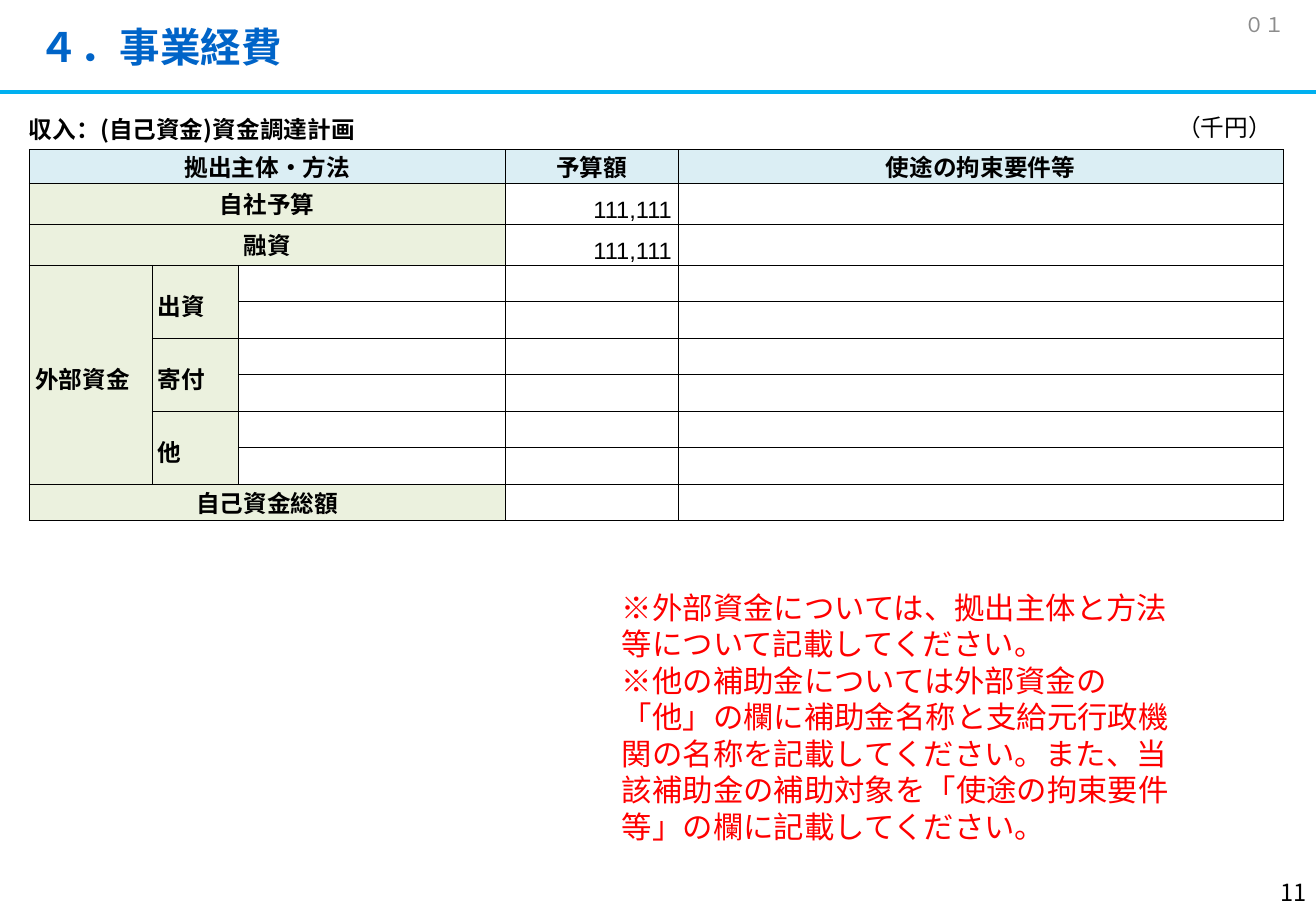
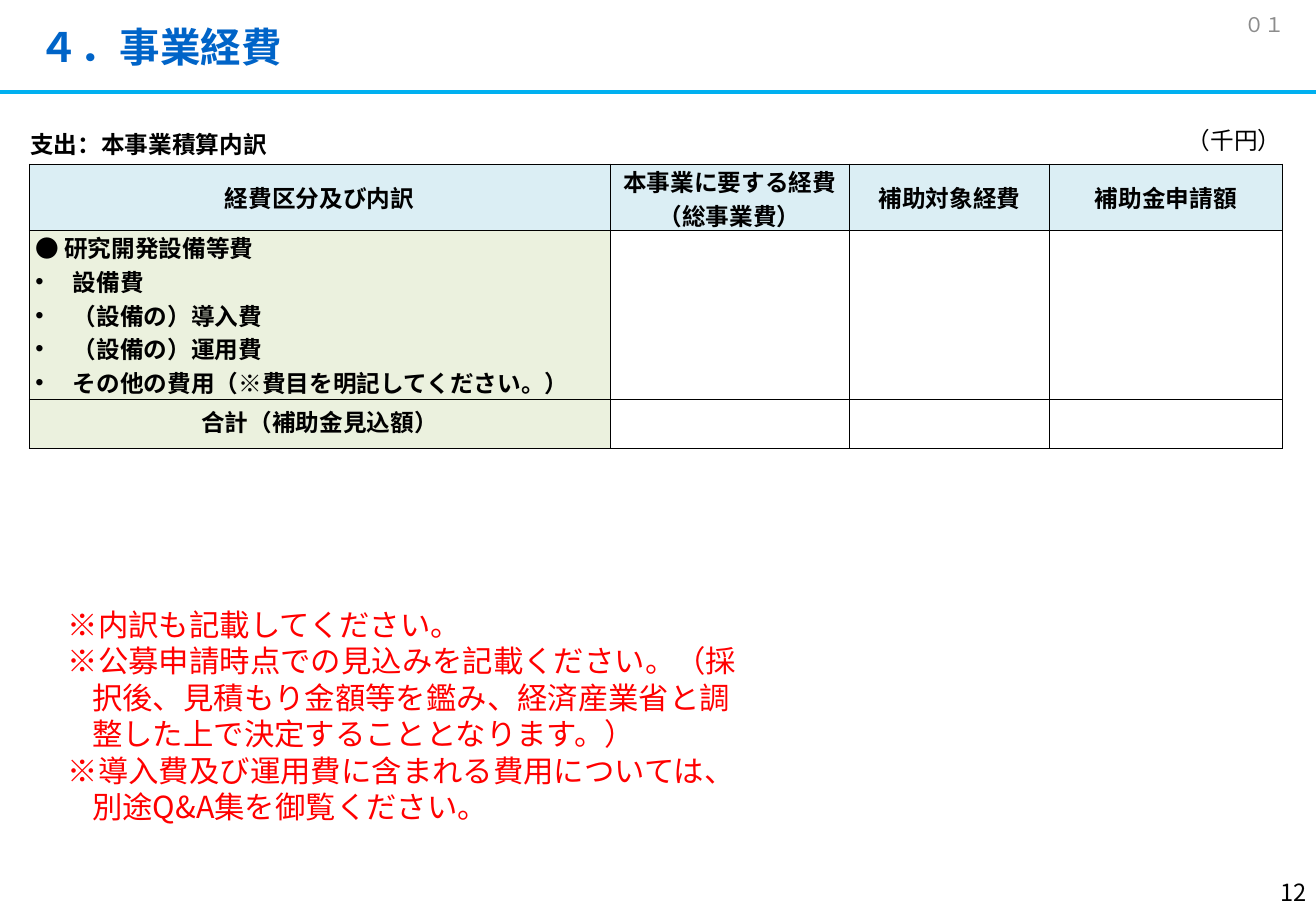
from pptx import Presentation
from pptx.dml.color import RGBColor
from pptx.enum.shapes import MSO_CONNECTOR as CONN
from pptx.enum.text import MSO_ANCHOR as ANCHOR, PP_ALIGN as ALIGN
from pptx.oxml.ns import qn
from pptx.util import Inches, Pt
from lxml.etree import SubElement

COLORS = {"title": "0064C8", "rule": "00B0F0", "head": "DBEEF4", "label": "EBF1DE",
          "blank": "FFFFFF", "text": "000000", "code": "8C8C8C", "note": "FF0000"}
FONT, CELL_FONT = "Noto Sans CJK JP", "Arial"
TITLE, CODE = "４．事業経費", "０１"
TABLE_LEFT = 0.24

# Paragraph formats for the table cells
HEAD = {"alignment": ALIGN.CENTER}
CENTER = {"alignment": ALIGN.CENTER, "line_spacing": Pt(20)}
AMOUNT = {"alignment": ALIGN.RIGHT, "line_spacing": Pt(24)}
GROUP = {"alignment": ALIGN.JUSTIFY, "line_spacing": Pt(24)}
ITEM = {"alignment": ALIGN.JUSTIFY, "line_spacing": Pt(20)}
TOTAL = {"alignment": ALIGN.CENTER, "line_spacing": Pt(17), "space_before": Pt(6)}
EMPTY = {"line_spacing": Pt(20)}

# Cells: (row, column, rows spanned, columns spanned, fill, format, paragraphs)
INCOME = {
    "top": 1.23,
    "cols": [1.01, 0.71, 2.2, 1.42, 4.98],
    "rows": [0.28, 0.33, 0.34] + [0.28, 0.29] * 3 + [0.28],
    "cells": [
        (0, 0, 1, 3, "head", CENTER, ["拠出主体・方法"]),
        (0, 3, 1, 1, "head", CENTER, ["予算額"]),
        (0, 4, 1, 1, "head", CENTER, ["使途の拘束要件等"]),
        (1, 0, 1, 3, "label", CENTER, ["自社予算"]),
        (1, 3, 1, 1, "blank", AMOUNT, ["111,111"]),
        (2, 0, 1, 3, "label", CENTER, ["融資"]),
        (2, 3, 1, 1, "blank", AMOUNT, ["111,111"]),
        (3, 0, 6, 1, "label", GROUP, ["外部資金"]),
        (3, 1, 2, 1, "label", GROUP, ["出資"]),
        (5, 1, 2, 1, "label", GROUP, ["寄付"]),
        (7, 1, 2, 1, "label", GROUP, ["他"]),
        (9, 0, 1, 3, "label", CENTER, ["自己資金総額"]),
    ],
}
EXPENSES = {
    "top": 1.35,
    "cols": [4.78, 1.97, 1.65, 1.91],
    "rows": [0.55, 1.39, 0.4],
    "cells": [
        (0, 0, 1, 1, "head", HEAD, ["経費区分及び内訳"]),
        (0, 1, 1, 1, "head", HEAD, ["本事業に要する経費", "（総事業費）"]),
        (0, 2, 1, 1, "head", HEAD, ["補助対象経費"]),
        (0, 3, 1, 1, "head", HEAD, ["補助金申請額"]),
        (1, 0, 1, 1, "label", ITEM, ["● 研究開発設備等費", "設備費", "（設備の）導入費",
                                     "（設備の）運用費",
                                     "その他の費用（※費目を明記してください。）"]),
        (2, 0, 1, 1, "label", TOTAL, ["合計（補助金見込額）"]),
    ],
}

# Boxes are left, top, width, height; notes pair a hanging indent with a text
SLIDES = [
    {"number": "11", "table": INCOME,
     "caption": ("収入：(自己資金)資金調達計画", (0.14, 0.9, 3.72, 0.34)),
     "unit": (9.59, 0.88, 1.13, 0.34),
     "note_box": (5.02, 4.8, 4.8, 2.22),
     "notes": [
         (0, "※外部資金については、拠出主体と方法等について記載してください。"),
         (0, "※他の補助金については外部資金の「他」の欄に補助金名称と支給元行政機関の名称を"
             "記載してください。また、当該補助金の補助対象を「使途の拘束要件等」の欄に"
             "記載してください。")]},
    {"number": "12", "table": EXPENSES,
     "caption": ("支出：本事業積算内訳", (0.15, 1.02, 3.72, 0.34)),
     "unit": (9.67, 0.99, 1.13, 0.34),
     "note_box": (0.46, 4.94, 5.75, 1.92),
     "notes": [
         (0, "※内訳も記載してください。"),
         (0.2, "※公募申請時点での見込みを記載ください。（採択後、見積もり金額等を鑑み、"
               "経済産業省と調整した上で決定することとなります。）"),
         (0.2, "※導入費及び運用費に含まれる費用については、別途Q&A集を御覧ください。")]},
]


def rgb(name):
    return RGBColor.from_string(COLORS[name])


def set_attrs(obj, values):
    for name, value in values.items():
        setattr(obj, name, value)


def add_run(p, text, size, color="text", bold=False, font=FONT):
    r = p.add_run()
    r.text = text
    r.font.color.rgb = rgb(color)
    set_attrs(r.font, {"size": Pt(size), "bold": bold, "name": font})
    SubElement(r.font._element, qn("a:ea"), typeface=FONT)


def hang(p, indent, bullet=None):
    pPr = p._p.get_or_add_pPr()
    pPr.set("marL", str(Inches(indent)))
    pPr.set("indent", str(-Inches(indent)))
    if bullet:
        SubElement(pPr, qn("a:buFont"), typeface="Arial")
        SubElement(pPr, qn("a:buChar"), char=bullet)


def paragraphs(tf, count):
    return [tf.paragraphs[0]] + [tf.add_paragraph() for _ in range(count - 1)]


def add_text(s, box, texts, size, color="text", bold=False,
             anchor=ANCHOR.TOP, align=ALIGN.LEFT):
    tf = s.shapes.add_textbox(*map(Inches, box)).text_frame
    set_attrs(tf, {"word_wrap": True, "vertical_anchor": anchor})
    for p, (indent, text) in zip(paragraphs(tf, len(texts)), texts):
        p.alignment = align
        if indent:
            hang(p, indent)
        add_run(p, text, size, color, bold)


def style_cell(cell, fill):
    tcPr = cell._tc.get_or_add_tcPr()
    for side in ("a:lnL", "a:lnR", "a:lnT", "a:lnB"):
        ln = SubElement(tcPr, qn(side), w=str(Pt(0.5)))
        SubElement(SubElement(ln, qn("a:solidFill")), qn("a:srgbClr"), val=COLORS["text"])
    cell.fill.solid()
    cell.fill.fore_color.rgb = rgb(fill)
    set_attrs(cell, {"margin_left": Inches(0.05), "margin_right": Inches(0.05),
                     "margin_top": 0, "margin_bottom": 0,
                     "vertical_anchor": ANCHOR.MIDDLE})


def add_budget_table(s, data):
    cols, rows = data["cols"], data["rows"]
    table = s.shapes.add_table(len(rows), len(cols), Inches(TABLE_LEFT), Inches(data["top"]),
                               Inches(sum(cols)), Inches(sum(rows))).table
    for col, width in zip(table.columns, cols):
        col.width = Inches(width)
    for row, height in zip(table.rows, rows):
        row.height = Inches(height)

    # Fill colours, spans and formats by position
    fills = {(r + i, c + j): fill for r, c, h, w, fill, _, _ in data["cells"]
             for i in range(h) for j in range(w)}
    for r in range(len(rows)):
        for c in range(len(cols)):
            cell = table.cell(r, c)
            style_cell(cell, fills.get((r, c), "blank"))
            set_attrs(cell.text_frame.paragraphs[0], EMPTY)
    for r, c, h, w, _, fmt, texts in data["cells"]:
        cell = table.cell(r, c)
        if h * w > 1:
            cell.merge(table.cell(r + h - 1, c + w - 1))
        if fmt is ITEM:
            cell.vertical_anchor = ANCHOR.TOP
        for i, (p, text) in enumerate(zip(paragraphs(cell.text_frame, len(texts)), texts)):
            set_attrs(p, {"line_spacing": None, **fmt})
            if fmt is ITEM and i:
                hang(p, 0.31, "•")
            add_run(p, text, 14, bold=fmt is not AMOUNT, font=CELL_FONT)


def add_frame(s, number):
    # Title, rule, document code and page number
    add_text(s, (0.22, 0.13, 10.4, 0.5), [(0, TITLE)], 24, "title", True, ANCHOR.MIDDLE)
    rule = s.shapes.add_connector(CONN.STRAIGHT, Inches(-0.01), Inches(0.76),
                                  Inches(10.83), Inches(0.76))
    rule.line.color.rgb = rgb("rule")
    rule.line.width = Pt(2.25)
    SubElement(rule._element.spPr, qn("a:effectLst"))
    add_text(s, (10.14, 0, 2.53, 0.4), [(0, CODE)], 12, "code", anchor=ANCHOR.MIDDLE)
    add_text(s, (8.32, 7.14, 2.53, 0.4), [(0, number)], 14,
             anchor=ANCHOR.MIDDLE, align=ALIGN.RIGHT)


def main():
    prs = Presentation()
    prs.slide_width, prs.slide_height = Inches(10.83), Inches(7.5)
    for content in SLIDES:
        s = prs.slides.add_slide(prs.slide_layouts[6])
        add_frame(s, content["number"])
        caption, box = content["caption"]
        add_text(s, box, [(0, caption)], 14, bold=True)
        add_text(s, content["unit"], [(0, "（千円）")], 14)
        add_budget_table(s, content["table"])
        add_text(s, content["note_box"], content["notes"], 18, "note")
    prs.save("out.pptx")


if __name__ == "__main__":
    main()
